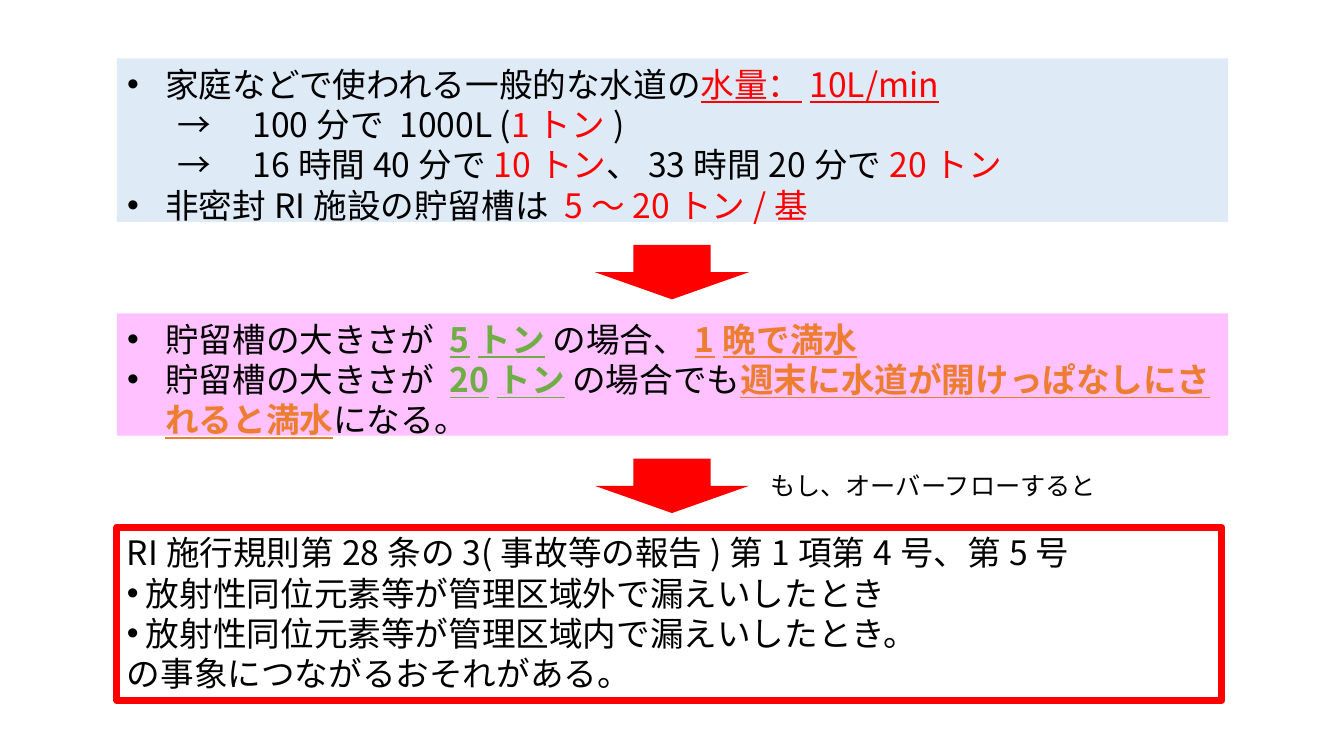
"""Build a slide on how quickly a running tap fills a storage tank."""
from dataclasses import dataclass

from lxml import etree
from pptx import Presentation
from pptx.dml.color import RGBColor
from pptx.enum.shapes import MSO_SHAPE
from pptx.enum.text import MSO_ANCHOR, MSO_AUTO_SIZE, PP_ALIGN
from pptx.oxml.ns import qn
from pptx.util import Inches, Pt

RECTANGLE = MSO_SHAPE.RECTANGLE
DOWN_ARROW = MSO_SHAPE.DOWN_ARROW
TOP = MSO_ANCHOR.TOP
LEFT = PP_ALIGN.LEFT
FIT_SHAPE = MSO_AUTO_SIZE.SHAPE_TO_FIT_TEXT
TWO_CONTENT_LAYOUT = 3
FONT = "Noto Sans CJK JP"
COLOURS = {
    "black": "000000",
    "red": "FF0000",
    "green": "70AD47",
    "orange": "ED7D31",
    "pale_blue": "DEEBF7",
    "pink": "FFC1FF",
}


@dataclass(frozen=True)
class Span:
    """A stretch of text in one style."""
    text: str
    colour: str = "black"
    bold: bool = False
    underline: bool = False


@dataclass(frozen=True)
class Line:
    """A paragraph, bulleted when its hanging indent is above zero."""
    spans: tuple[Span, ...]
    indent: float = 0


@dataclass(frozen=True)
class Area:
    """A place on the slide in inches."""
    left: float
    top: float
    width: float
    height: float


@dataclass(frozen=True)
class ListBox:
    """A filled list held in a body placeholder."""
    index: int
    area: Area
    fill: str
    lines: tuple[Line, ...]


def key(text: str, colour: str) -> Span:
    """Return a bold, underlined span."""
    return Span(text, colour, True, True)


LIST_BOXES = (
    ListBox(1, Area(1.16, 0.58, 11.02, 1.72), "pale_blue", (
        Line((Span("家庭などで使われる一般的な水道の"),
              Span("水量：10L/min", "red", underline=True)), 0.38),
        Line((Span("\t→\u3000100分で 1000L ("), Span("1トン", "red"), Span(")"))),
        Line((Span("\t→\u300016時間40分で"), Span("10トン", "red"),
              Span("、33時間20分で"), Span("20トン", "red"))),
        Line((Span("非密封RI施設の貯留槽は"), Span(" 5〜20トン/基", "red")), 0.38),
    )),
    ListBox(2, Area(1.16, 3.11, 11.02, 1.31), "pink", (
        Line((Span("貯留槽の大きさが "), key("5トン", "green"),
              Span(" の場合、"), key("1晩で満水", "orange")), 0.38),
        Line((Span("貯留槽の大きさが "), key("20トン", "green"), Span(" の場合でも"),
              key("週末に水道が開けっぱなしにされると満水", "orange"),
              Span("になる。")), 0.38),
    )),
)
REPORT_AREA = Area(1.16, 5.23, 10.96, 1.72)
REPORT_LINES = (
    Line((Span("RI施行規則第28条の3(事故等の報告)第1項第4号、第5号"),)),
    Line((Span("放射性同位元素等が管理区域外で漏えいしたとき"),), 0.19),
    Line((Span("放射性同位元素等が管理区域内で漏えいしたとき。"),), 0.19),
    Line((Span("の事象につながるおそれがある。"),)),
)
ARROW_AREAS = tuple(Area(5.9, top, 1.53, 0.54) for top in (2.43, 4.55))
NOTE_AREA = Area(7.54, 4.62, 3.48, 0.4)
NOTE_LINES = (Line((Span("もし、オーバーフローすると"),)),)


def colour_of(name: str) -> RGBColor:
    """Return the named colour."""
    return RGBColor.from_string(COLOURS[name])


def place(shape, area: Area) -> None:
    """Move and size a shape."""
    shape.left, shape.top = Inches(area.left), Inches(area.top)
    shape.width, shape.height = Inches(area.width), Inches(area.height)


def set_bullet(para, indent: float) -> None:
    """Give a paragraph its hanging indent and bullet."""
    properties = para._p.get_or_add_pPr()
    properties.set("marL", str(Inches(indent)))
    properties.set("indent", str(-Inches(indent)))
    if indent:
        etree.SubElement(properties, qn("a:buFont")).set("typeface", "Arial")
        etree.SubElement(properties, qn("a:buChar")).set("char", "•")
    else:
        etree.SubElement(properties, qn("a:buNone"))


def write(shape, lines: tuple[Line, ...], size: int, wrap: bool = True) -> None:
    """Write styled lines into a shape."""
    frame = shape.text_frame
    frame.word_wrap = wrap
    frame.vertical_anchor = TOP
    frame.auto_size = FIT_SHAPE
    for number, line in enumerate(lines):
        para = frame.add_paragraph() if number else frame.paragraphs[0]
        para.alignment = LEFT
        para.space_before = Pt(0)
        set_bullet(para, line.indent)
        para.font.size = Pt(size)
        para.font.name = FONT
        east_asian = etree.SubElement(para.font._element, qn("a:ea"))
        east_asian.set("typeface", FONT)
        for span in line.spans:
            run = para.add_run()
            run.text = span.text
            run.font.color.rgb = colour_of(span.colour)
            if span.bold:
                run.font.bold = True
            if span.underline:
                run.font.underline = True


def add_shape(page, kind: MSO_SHAPE, area: Area):
    """Add a preset shape without a shadow."""
    shape = page.shapes.add_shape(kind, 0, 0, 0, 0)
    place(shape, area)
    shape.shadow.inherit = False
    return shape


def main() -> None:
    """Build and save the deck."""
    deck = Presentation()
    deck.slide_width, deck.slide_height = Inches(13.33), Inches(7.5)
    page = deck.slides.add_slide(deck.slide_layouts[TWO_CONTENT_LAYOUT])
    title = page.shapes.title._element
    title.getparent().remove(title)

    for item in LIST_BOXES:
        box = page.placeholders[item.index]
        place(box, item.area)
        box.fill.solid()
        box.fill.fore_color.rgb = colour_of(item.fill)
        write(box, item.lines, 24)

    report = add_shape(page, RECTANGLE, REPORT_AREA)
    report.fill.background()
    report.line.color.rgb = colour_of("red")
    report.line.width = Pt(5)
    write(report, REPORT_LINES, 24)

    for area in ARROW_AREAS:
        arrow = add_shape(page, DOWN_ARROW, area)
        arrow.fill.solid()
        arrow.fill.fore_color.rgb = colour_of("red")
        arrow.line.fill.background()

    note = page.shapes.add_textbox(0, 0, 0, 0)
    place(note, NOTE_AREA)
    write(note, NOTE_LINES, 18, wrap=False)
    deck.save("out.pptx")


if __name__ == "__main__":
    main()
